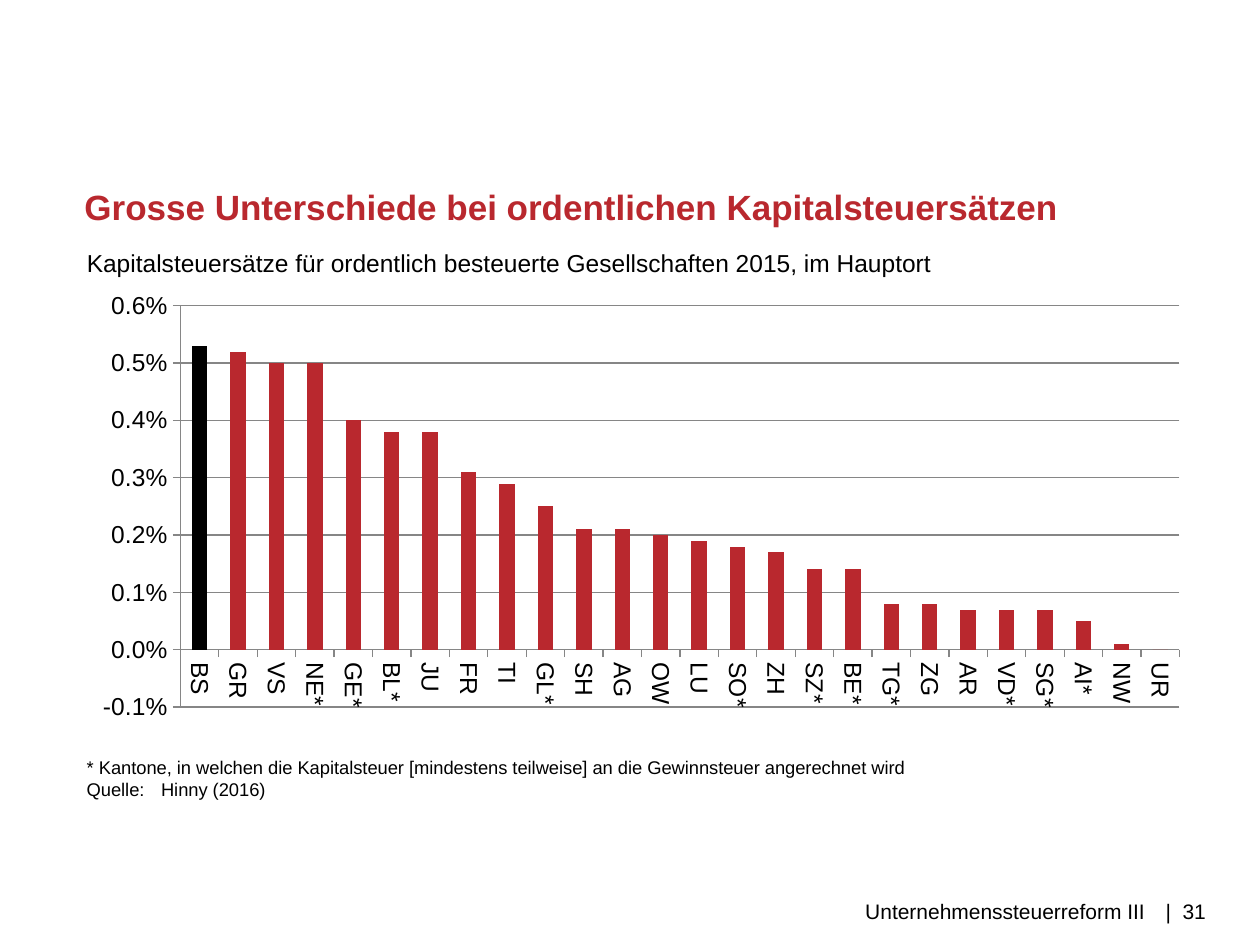
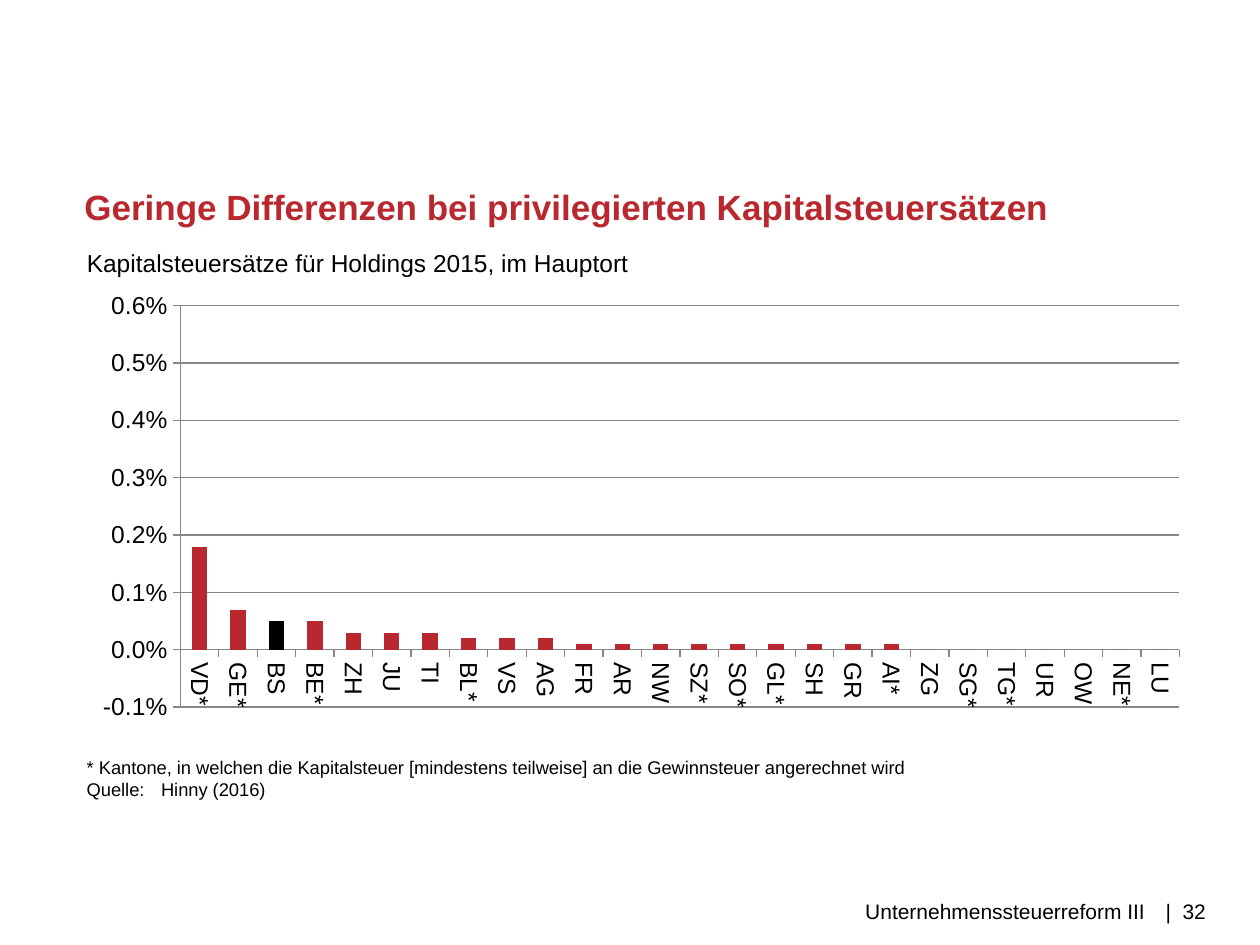
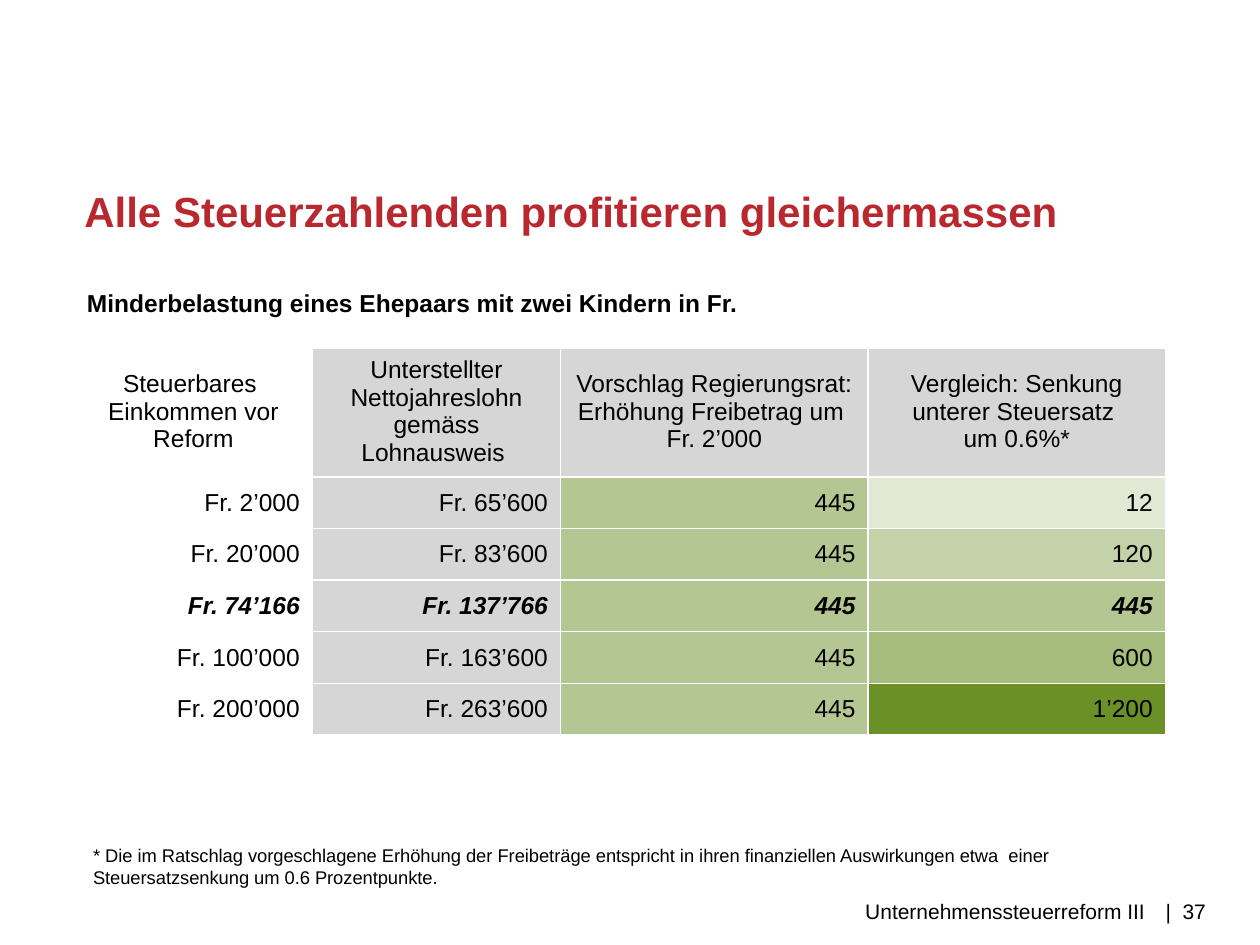
from dataclasses import dataclass

from lxml.etree import SubElement
from pptx import Presentation
from pptx.chart.data import CategoryChartData
from pptx.dml.color import RGBColor
from pptx.enum.chart import XL_CHART_TYPE, XL_TICK_MARK
from pptx.enum.text import MSO_ANCHOR, PP_ALIGN
from pptx.oxml.ns import qn
from pptx.util import Inches, Pt


@dataclass(frozen=True)
class Theme:
    font: str = "Arial"
    red: str = "B9282E"
    black: str = "000000"
    white: str = "FFFFFF"
    axis: str = "868686"
    grey: str = "D6D6D6"
    green: str = "6A9026"
    title: float = 20
    large_title: float = 24
    body: float = 14
    footer: float = 12
    note: float = 10.5


THEME = Theme()
FOOTER = "Unternehmenssteuerreform III"
CREDIT_NOTES = [
    "* Kantone, in welchen die Kapitalsteuer [mindestens teilweise] an die Gewinnsteuer angerechnet wird",
    "Quelle:\tHinny (2016)",
]
RELIEF_NOTE = (
    "* Die im Ratschlag vorgeschlagene Erhöhung der Freibeträge entspricht in ihren finanziellen "
    "Auswirkungen etwa  einer Steuersatzsenkung um 0.6 Prozentpunkte."
)

ORDINARY_RATES = {
    "BS": 0.0053, "GR": 0.0052, "VS": 0.005, "NE*": 0.005, "GE*": 0.004, "BL*": 0.0038,
    "JU": 0.0038, "FR": 0.0031, "TI": 0.0029, "GL*": 0.0025, "SH": 0.0021, "AG": 0.0021,
    "OW": 0.002, "LU": 0.0019, "SO*": 0.0018, "ZH": 0.0017, "SZ*": 0.0014, "BE*": 0.0014,
    "TG*": 0.0008, "ZG": 0.0008, "AR": 0.0007, "VD*": 0.0007, "SG*": 0.0007, "AI*": 0.0005,
    "NW": 0.0001, "UR": 0,
}
HOLDING_RATES = {
    "VD*": 0.0018, "GE*": 0.0007, "BS": 0.0005, "BE*": 0.0005, "ZH": 0.0003, "JU": 0.0003,
    "TI": 0.0003, "BL*": 0.0002, "VS": 0.0002, "AG": 0.0002, "FR": 0.0001, "AR": 0.0001,
    "NW": 0.0001, "SZ*": 0.0001, "SO*": 0.0001, "GL*": 0.0001, "SH": 0.0001, "GR": 0.0001,
    "AI*": 0.0001, "ZG": 0, "SG*": 0, "TG*": 0, "UR": 0, "OW": 0, "NE*": 0, "LU": 0,
}
RELIEF_CAPTION = "Minderbelastung eines Ehepaars mit zwei Kindern in Fr."
RELIEF_HEADINGS = [
    "Steuerbares \nEinkommen vor Reform",
    "Unterstellter Nettojahreslohn gemäss Lohnausweis ",
    "Vorschlag Regierungsrat: Erhöhung Freibetrag um \nFr. 2’000",
    "Vergleich: Senkung unterer Steuersatz \num 0.6%*",
]
RELIEF_ROWS = [
    ("Fr. 2’000", "Fr. 65’600", "445", "12", 20),
    ("Fr. 20’000", "Fr. 83’600", "445", "120", 40),
    ("Fr. 74’166", "Fr. 137’766", "445", "445", 50),
    ("Fr. 100’000", "Fr. 163’600", "445", "600", 60),
    ("Fr. 200’000", "Fr. 263’600", "445", "1’200", 100),
]
BREAK_EVEN = "Fr. 74’166"


def color(value):
    return RGBColor.from_string(value)


def style_font(font, size, value=THEME.black, bold=False, italic=False):
    font.name = THEME.font
    font.size = Pt(size)
    font.color.rgb = color(value)
    font.bold = bold
    font.italic = italic


def add_tab(paragraph, position):
    tabs = SubElement(paragraph._p.get_or_add_pPr(), qn("a:tabLst"))
    SubElement(tabs, qn("a:tab"), pos=str(Inches(position)), algn="l")


def add_text(slide, box, lines, size, value=THEME.black, bold=False,
             align=PP_ALIGN.LEFT, insets=(0.1, 0.05), tab=None):
    frame = slide.shapes.add_textbox(*map(Inches, box)).text_frame
    frame.word_wrap = True
    frame.margin_left = frame.margin_right = Inches(insets[0])
    frame.margin_top = frame.margin_bottom = Inches(insets[1])
    for index, line in enumerate(lines):
        paragraph = frame.add_paragraph() if index else frame.paragraphs[0]
        paragraph.text = line
        paragraph.alignment = align
        if tab:
            add_tab(paragraph, tab)
        style_font(paragraph.font, size, value, bold)


def add_page(deck, title, number, title_size=THEME.title):
    slide = deck.slides.add_slide(deck.slide_layouts[6])
    add_text(slide, (0.67, 1.47, 8.9, 0.4), [title], title_size, THEME.red, True, insets=(0, 0))
    add_text(slide, (2.99, 7.1, 6.1, 0.4), [FOOTER], THEME.footer,
             align=PP_ALIGN.RIGHT, insets=(0, 0.03))
    add_text(slide, (9.25, 7.1, 0.75, 0.4), [f"|  {number}"], THEME.footer, insets=(0, 0.03))
    return slide


def style_axis(axis, number_format):
    axis.major_tick_mark = XL_TICK_MARK.OUTSIDE
    axis.minor_tick_mark = XL_TICK_MARK.NONE
    axis.format.line.color.rgb = color(THEME.axis)
    axis.format.line.width = Pt(0.75)
    axis.tick_labels.number_format = number_format
    axis.tick_labels.number_format_is_linked = False
    style_font(axis.tick_labels.font, THEME.body)


def place_plot(chart, **fractions):
    area = chart._chartSpace.chart.plotArea
    for old_layout in area.findall(qn("c:layout")):
        area.remove(old_layout)
    layout = SubElement(area, qn("c:layout"))
    area.insert(0, layout)
    manual = SubElement(layout, qn("c:manualLayout"))
    settings = {"layoutTarget": "inner", "xMode": "edge", "yMode": "edge", **fractions}
    for tag, setting in settings.items():
        SubElement(manual, qn(f"c:{tag}"), val=str(setting))


def add_rate_chart(slide, rates):
    data = CategoryChartData(number_format="0.0%")
    data.categories = list(rates)
    data.add_series("Series 1", list(rates.values()))
    box = map(Inches, (0.63, 2.25, 8.91, 3.54))
    chart = slide.shapes.add_chart(XL_CHART_TYPE.COLUMN_STACKED, *box, data).chart
    chart.has_legend = False
    chart.has_title = False
    style_font(chart.font, THEME.body)
    place_plot(chart, x=0.09, y=0.05, w=0.89, h=0.9)

    plot = chart.plots[0]
    plot.gap_width = 150
    plot.overlap = 100
    plot.vary_by_categories = False
    cantons = plot.series[0]
    cantons.invert_if_negative = False
    cantons.format.fill.solid()
    cantons.format.fill.fore_color.rgb = color(THEME.red)
    basel = cantons.points[list(rates).index("BS")].format.fill
    basel.solid()
    basel.fore_color.rgb = color(THEME.black)

    style_axis(chart.category_axis, "General")
    label_body = chart.category_axis._element.find(qn("c:txPr")).find(qn("a:bodyPr"))
    label_body.set("rot", "5400000")
    label_body.set("vert", "horz")
    rate_axis = chart.value_axis
    style_axis(rate_axis, "0.0%")
    rate_axis.minimum_scale = -0.001
    rate_axis.maximum_scale = 0.006
    rate_axis.major_unit = 0.001
    rate_axis.has_major_gridlines = True
    rate_axis.major_gridlines.format.line.color.rgb = color(THEME.axis)
    rate_axis.major_gridlines.format.line.width = Pt(0.75)


def add_rate_slide(deck, title, subtitle, rates, number):
    slide = add_page(deck, title, number)
    add_text(slide, (0.59, 1.92, 8.59, 0.34), [subtitle], THEME.body)
    add_rate_chart(slide, rates)
    add_text(slide, (0.59, 5.95, 8.43, 0.64), CREDIT_NOTES, THEME.note, tab=0.59)


def border_cell(cell, top=1, bottom=1):
    properties = cell._tc.get_or_add_tcPr()
    for side, width in (("L", 1), ("R", 1), ("T", top), ("B", bottom)):
        line = SubElement(properties, qn(f"a:ln{side}"), w=str(Pt(width)))
        fill = SubElement(line, qn("a:solidFill"))
        SubElement(fill, qn("a:srgbClr"), val=THEME.white)


def fill_cell(cell, value, opacity=100):
    if value is None:
        cell.fill.background()
        return
    cell.fill.solid()
    cell.fill.fore_color.rgb = color(value)
    if opacity < 100:
        tint = cell._tc.tcPr.find(qn("a:solidFill")).find(qn("a:srgbClr"))
        SubElement(tint, qn("a:alpha"), val=str(opacity * 1000))


def write_cell(cell, text, align, bold=False, italic=False, anchor=MSO_ANCHOR.MIDDLE):
    paragraph = cell.text_frame.paragraphs[0]
    paragraph.text = text
    paragraph.alignment = align
    style_font(paragraph.font, THEME.body, bold=bold, italic=italic)
    cell.vertical_anchor = anchor


def add_relief_table(slide):
    widths = (1.89, 1.97, 2.44, 2.36)
    heights = [0.5, 0.96] + [0.41] * len(RELIEF_ROWS)
    box = map(Inches, (0.59, 2.25, sum(widths), sum(heights)))
    table = slide.shapes.add_table(len(heights), len(widths), *box).table
    table.first_row = table.horz_banding = False
    for column, width in zip(table.columns, widths):
        column.width = Inches(width)
    for row, height in zip(table.rows, heights):
        row.height = Inches(height)

    caption = table.cell(0, 0)
    caption.merge(table.cell(0, 3))
    for column in range(len(widths)):
        border_cell(table.cell(0, column), bottom=3)
        fill_cell(table.cell(0, column), None)
    write_cell(caption, RELIEF_CAPTION, PP_ALIGN.LEFT, bold=True, anchor=MSO_ANCHOR.TOP)

    for column, heading in enumerate(RELIEF_HEADINGS):
        cell = table.cell(1, column)
        border_cell(cell, top=3 if column else 1)
        fill_cell(cell, THEME.grey if column else None)
        write_cell(cell, heading, PP_ALIGN.CENTER)

    for row, (*amounts, opacity) in enumerate(RELIEF_ROWS, 2):
        fills = [(None,), (THEME.grey,), (THEME.green, 50), (THEME.green, opacity)]
        emphasis = amounts[0] == BREAK_EVEN
        for column, (amount, fill) in enumerate(zip(amounts, fills)):
            cell = table.cell(row, column)
            border_cell(cell)
            fill_cell(cell, *fill)
            write_cell(cell, amount, PP_ALIGN.RIGHT, emphasis, emphasis)


def add_relief_slide(deck):
    slide = add_page(deck, "Alle Steuerzahlenden profitieren gleichermassen", 37, THEME.large_title)
    add_relief_table(slide)
    add_text(slide, (0.64, 6.65, 8.43, 0.45), [RELIEF_NOTE], THEME.note, tab=0.59)


def main():
    deck = Presentation()
    deck.slide_width = Inches(10)
    deck.slide_height = Inches(7.5)
    add_rate_slide(
        deck, "Grosse Unterschiede bei ordentlichen Kapitalsteuersätzen",
        "Kapitalsteuersätze für ordentlich besteuerte Gesellschaften 2015, im Hauptort",
        ORDINARY_RATES, 31)
    add_rate_slide(
        deck, "Geringe Differenzen bei privilegierten Kapitalsteuersätzen",
        "Kapitalsteuersätze für Holdings 2015, im Hauptort",
        HOLDING_RATES, 32)
    add_relief_slide(deck)
    deck.save("out.pptx")


if __name__ == "__main__":
    main()
